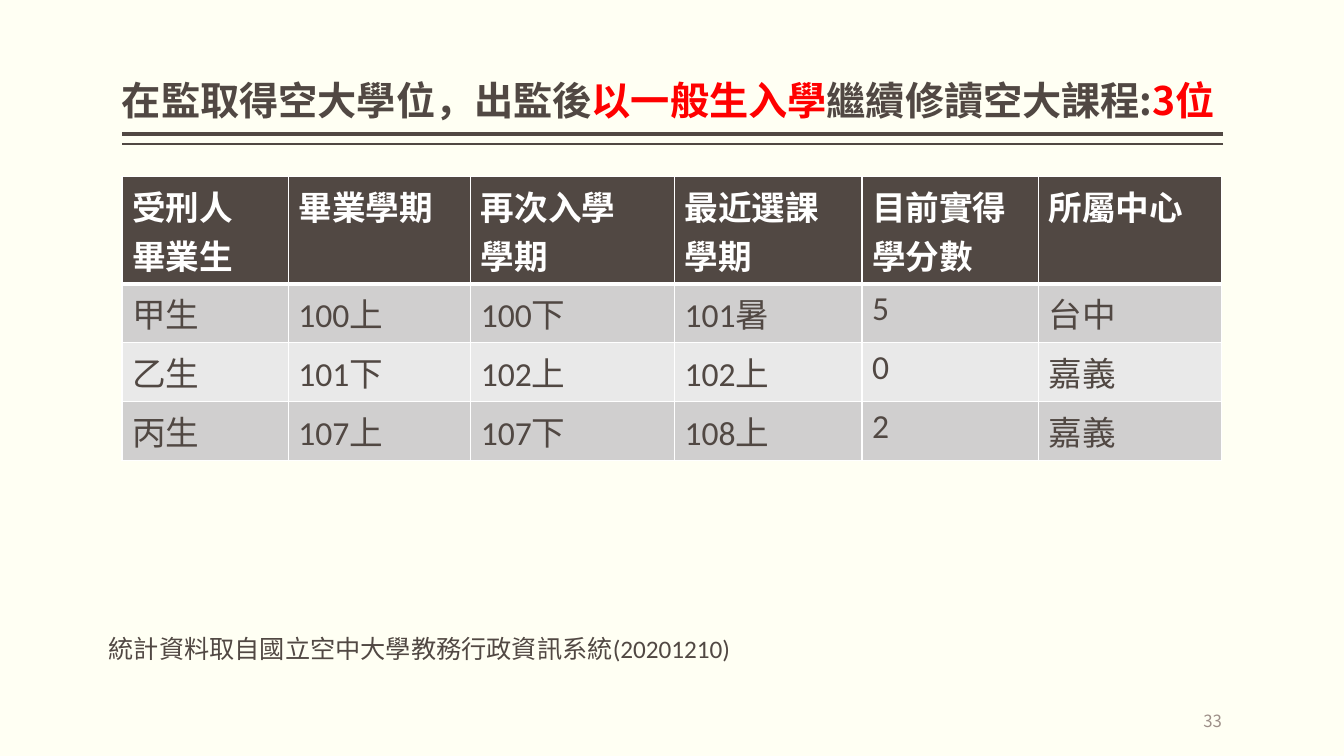
"""Build the slide on graduates who re-enrolled after release."""
from lxml import etree
from pptx import Presentation, util as u
from pptx.dml.color import RGBColor
from pptx.enum import shapes, text
from pptx.oxml import ns

Inches = u.Inches
CJK = "Noto Sans CJK TC"
COLORS = {"paper": "FFFFF3", "brown": "514843", "red": "FF0000", "white": "FFFFFF",
          "dark_band": "D0CFCF", "light_band": "E9E9E9", "number": "9D8F88"}


def add_span(para, words, size, color="brown", font="Calibri", bold=False):
    span = para.add_run()
    span.text = words
    span.font.size = u.Pt(size)
    span.font.name = font
    span.font.bold = bold
    span.font.color.rgb = RGBColor.from_string(COLORS[color])
    east_asian = etree.Element(ns.qn("a:ea"), typeface=CJK)
    span.font._element.find(ns.qn("a:latin")).addnext(east_asian)


def add_border(cell, side, width):
    edge = etree.SubElement(cell._tc.get_or_add_tcPr(), ns.qn(f"a:ln{side}"), w=str(u.Pt(width)))
    fill = etree.SubElement(edge, ns.qn("a:solidFill"))
    etree.SubElement(fill, ns.qn("a:srgbClr"), val=COLORS["white"])


deck = Presentation()
deck.slide_width, deck.slide_height = Inches(13.33), Inches(7.5)
page = deck.slides.add_slide(deck.slide_layouts[5])
page.background.fill.solid()
page.background.fill.fore_color.rgb = RGBColor.from_string(COLORS["paper"])

for y, width in [(1.33, 3), (1.43, 1)]:
    rule = page.shapes.add_connector(shapes.MSO_CONNECTOR.STRAIGHT,
                                     Inches(12.13), Inches(y), Inches(1.21), Inches(y))
    rule.line.color.rgb = RGBColor.from_string(COLORS["brown"])
    rule.line.width = u.Pt(width)
    etree.SubElement(rule._element.spPr, ns.qn("a:effectLst"))

title = page.shapes.title
title.left, title.top, title.width, title.height = map(Inches, (1.21, 0.08, 10.92, 1.2))
frame = title.text_frame
frame.word_wrap = True
frame.auto_size = text.MSO_AUTO_SIZE.NONE
frame.vertical_anchor = text.MSO_ANCHOR.BOTTOM
frame.margin_left = frame.margin_right = 0
para = frame.paragraphs[0]
para.alignment = text.PP_ALIGN.LEFT
para.line_spacing = 0.9
for words, color in [("在監取得空大學位，出監後", "brown"), ("以一般生入學", "red"),
                     ("繼續修讀空大課程:", "brown"), ("3位", "red")]:
    add_span(para, words, 28, color, CJK, True)

records = [
    ["受刑人\n畢業生", "畢業學期", "再次入學\n學期", "最近選課\n學期", "目前實得\n學分數", "所屬中心"],
    ["甲生", "100上", "100下", "101暑", "5", "台中"],
    ["乙生", "101下", "102上", "102上", "0", "嘉義"],
    ["丙生", "107上", "107下", "108上", "2", "嘉義"],
]
column_widths = [1.65, 1.81, 2.02, 1.86, 1.75, 1.82]
table = page.shapes.add_table(len(records), len(column_widths), Inches(1.21), Inches(1.75),
                              Inches(10.92), Inches(2.4)).table
for column, width in zip(table.columns, column_widths):
    column.width = Inches(width)
for row_index, record in enumerate(records):
    header = row_index == 0
    band = "brown" if header else ("dark_band" if row_index % 2 else "light_band")
    table.rows[row_index].height = Inches(0.41)
    for column_index, words in enumerate(record):
        cell = table.cell(row_index, column_index)
        for side in "LRTB":
            heavy = (header and side == "B") or (row_index == 1 and side == "T")
            add_border(cell, side, 3 if heavy else 1)
        cell.fill.solid()
        cell.fill.fore_color.rgb = RGBColor.from_string(COLORS[band])
        for line_index, line in enumerate(words.split("\n")):
            para = cell.text_frame.add_paragraph() if line_index else cell.text_frame.paragraphs[0]
            add_span(para, line, 24, "white" if header else "brown", bold=header)

number_box = page.shapes.add_textbox(Inches(10.12), Inches(6.95), Inches(2), Inches(0.4))
frame = number_box.text_frame
frame.word_wrap = True
frame.vertical_anchor = text.MSO_ANCHOR.MIDDLE
frame.margin_left = frame.margin_right = 0
frame.paragraphs[0].alignment = text.PP_ALIGN.RIGHT
add_span(frame.paragraphs[0], "33", 12, "number", CJK)

source_box = page.shapes.add_textbox(Inches(0.98), Inches(6.23), Inches(6.56), Inches(0.4))
frame = source_box.text_frame
frame.word_wrap = False
frame.auto_size = text.MSO_AUTO_SIZE.SHAPE_TO_FIT_TEXT
add_span(frame.paragraphs[0], "統計資料取自國立空中大學教務行政資訊系統(20201210)", 18)

deck.save("out.pptx")
